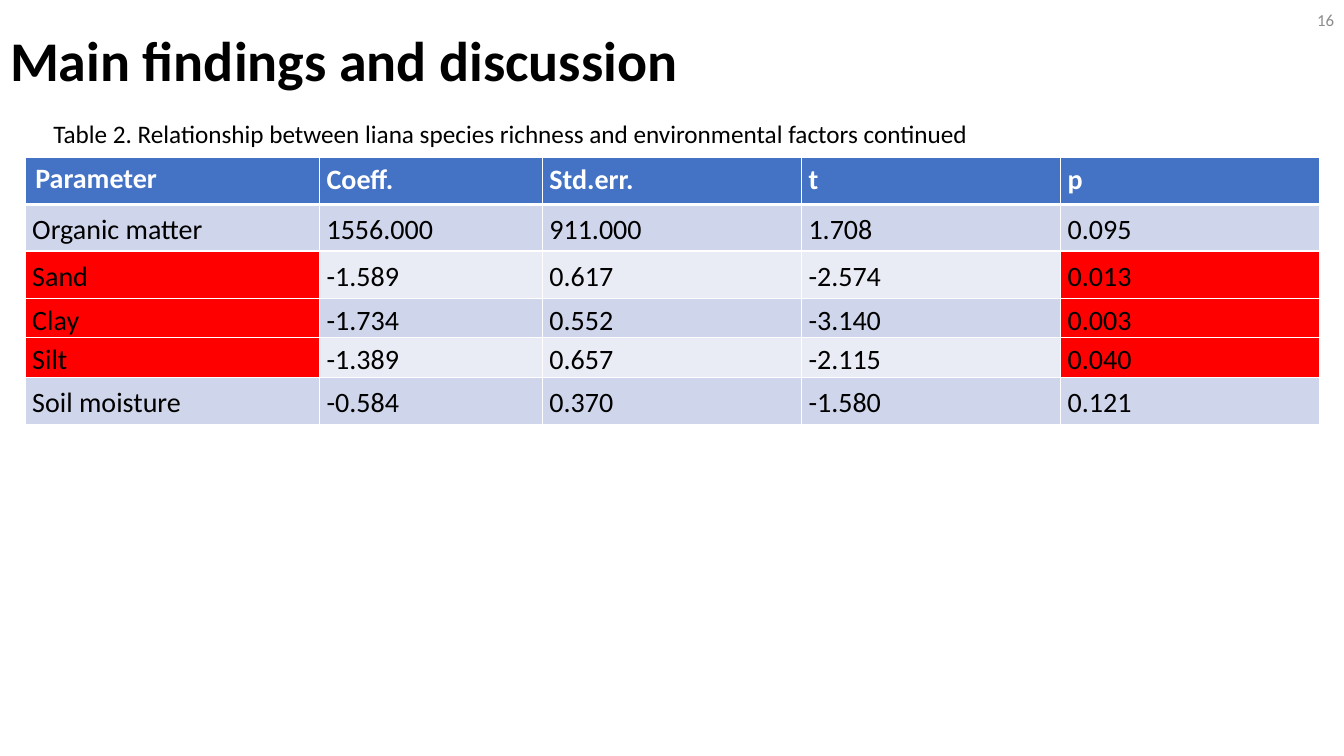
from dataclasses import dataclass

from lxml.etree import SubElement
from pptx import Presentation
from pptx.dml.color import RGBColor as Color
from pptx.enum.text import MSO_ANCHOR as Anchor, MSO_AUTO_SIZE as AutoSize, PP_ALIGN as Align
from pptx.oxml.ns import qn
from pptx.util import Inches, Pt


@dataclass(frozen=True)
class Theme:
    """Colours, font and type sizes of the slide."""
    font: str = "Calibri"
    black: str = "000000"
    white: str = "FFFFFF"
    grey: str = "8C8C8C"
    header: str = "4472C4"
    dark_band: str = "CFD5EA"
    light_band: str = "E9EBF5"
    highlight: str = "FF0000"
    title_size: int = 40
    table_size: int = 20
    caption_size: int = 18
    number_size: int = 12


THEME = Theme()
COLUMN_WIDTHS = (2.92, 2.21, 2.57, 2.57, 2.57)
ROW_HEIGHTS = (0.47, 0.46, 0.47, 0.38, 0.32, 0.47)
ROWS = (
    ("Parameter", "Coeff.", "Std.err.", "t", "p"),
    ("Organic matter", "1556.000", "911.000", "1.708", "0.095"),
    ("Sand", "-1.589", "0.617", "-2.574", "0.013"),
    ("Clay", "-1.734", "0.552", "-3.140", "0.003"),
    ("Silt", "-1.389", "0.657", "-2.115", "0.040"),
    ("Soil moisture", "-0.584", "0.370", "-1.580", "0.121"),
)
LIGHT_ROWS = ("Sand", "Silt")
SIGNIFICANT_ROWS = ("Sand", "Clay", "Silt")
HIGHLIGHT_COLUMNS = (0, 4)


def style_font(para, size, color, bold=False):
    """Set the font of a whole paragraph."""
    para.font.name = THEME.font
    para.font.size = Pt(size)
    para.font.bold = bold
    para.font.color.rgb = Color.from_string(color)


def add_title(page, text):
    """Fill and place the title placeholder."""
    title = page.shapes.title
    title.left, title.top = Inches(0), Inches(-0.1)
    title.width, title.height = Inches(12.83), Inches(1.45)
    frame = title.text_frame
    frame.text = text
    frame.vertical_anchor = Anchor.MIDDLE
    para = frame.paragraphs[0]
    para.alignment = Align.LEFT
    para.line_spacing = 0.9
    style_font(para, THEME.title_size, THEME.black, bold=True)


def add_label(page, text, left, top, width, size, color, align=Align.LEFT, wrap=True):
    """Add a one-line text box."""
    box = page.shapes.add_textbox(Inches(left), Inches(top), Inches(width), Inches(0.4))
    frame = box.text_frame
    frame.text = text
    frame.word_wrap = wrap
    frame.auto_size = AutoSize.NONE if wrap else AutoSize.SHAPE_TO_FIT_TEXT
    frame.vertical_anchor = Anchor.MIDDLE if wrap else Anchor.TOP
    para = frame.paragraphs[0]
    para.alignment = align
    style_font(para, size, color)


def add_borders(cell, top, bottom):
    """Draw white borders of the given top and bottom widths."""
    properties = cell._tc.get_or_add_tcPr()
    for side, width in (("L", 1), ("R", 1), ("T", top), ("B", bottom)):
        line = SubElement(properties, qn(f"a:ln{side}"), w=str(Pt(width)))
        fill = SubElement(line, qn("a:solidFill"))
        SubElement(fill, qn("a:srgbClr"), val=THEME.white)


def cell_fill(row, column):
    """Choose the fill of a table cell."""
    name = ROWS[row][0]
    if row == 0:
        return THEME.header
    if name in SIGNIFICANT_ROWS and column in HIGHLIGHT_COLUMNS:
        return THEME.highlight
    return THEME.light_band if name in LIGHT_ROWS else THEME.dark_band


def fill_cell(cell, row, column):
    """Write and format one table cell."""
    is_header = row == 0
    cell.text = ROWS[row][column]
    para = cell.text_frame.paragraphs[0]
    if (row, column) != (0, 0):
        cell.margin_left = cell.margin_right = Inches(0.07)
        cell.margin_top = cell.margin_bottom = Inches(0)
        para.line_spacing = 1.15
        para.space_after = Pt(10)
    cell.vertical_anchor = Anchor.TOP if is_header else Anchor.MIDDLE
    style_font(para, THEME.table_size, THEME.white if is_header else THEME.black, is_header)
    add_borders(cell, top=3 if row == 1 else 1, bottom=3 if is_header else 1)
    cell.fill.solid()
    cell.fill.fore_color.rgb = Color.from_string(cell_fill(row, column))


def add_findings_table(page):
    """Add the table of regression results."""
    table = page.shapes.add_table(
        len(ROWS), len(COLUMN_WIDTHS), Inches(0.25), Inches(1.56), Inches(12.83), Inches(2.61)
    ).table
    for column, width in zip(table.columns, COLUMN_WIDTHS):
        column.width = Inches(width)
    for row, height in zip(table.rows, ROW_HEIGHTS):
        row.height = Inches(height)
    for row in range(len(ROWS)):
        for column in range(len(COLUMN_WIDTHS)):
            fill_cell(table.cell(row, column), row, column)


def main():
    """Build and save the slide."""
    deck = Presentation()
    deck.slide_width, deck.slide_height = Inches(13.33), Inches(7.5)
    page = deck.slides.add_slide(deck.slide_layouts[5])
    add_title(page, "Main findings and discussion")
    add_findings_table(page)
    add_label(page, "16", 10.33, 0, 3, THEME.number_size, THEME.grey, align=Align.RIGHT)
    add_label(
        page,
        "Table 2. Relationship between liana species richness and environmental factors continued",
        0.43, 1.12, 9.32, THEME.caption_size, THEME.black, wrap=False,
    )
    deck.save("out.pptx")


if __name__ == "__main__":
    main()
